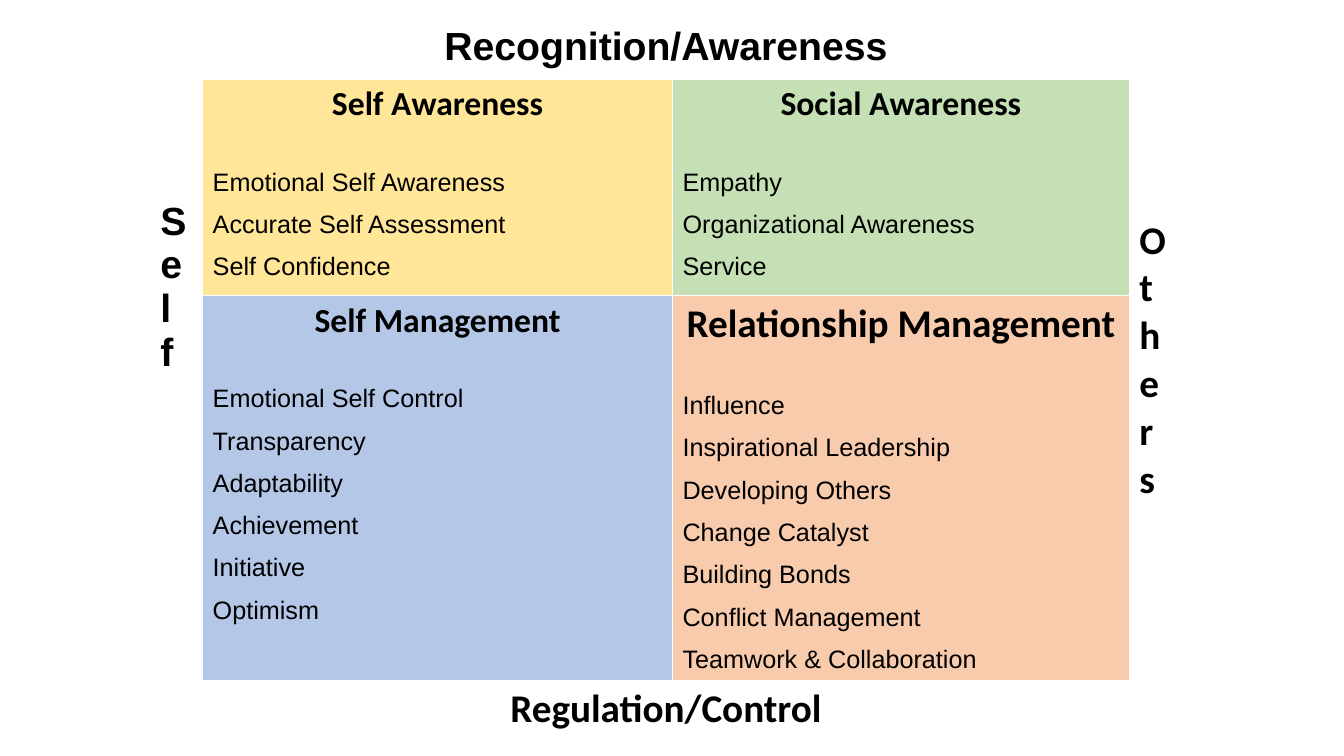
from dataclasses import dataclass

from lxml.etree import SubElement
from pptx import Presentation
from pptx.dml.color import RGBColor
from pptx.enum.text import PP_ALIGN
from pptx.oxml.ns import qn
from pptx.util import Inches, Pt


@dataclass(frozen=True)
class Theme:
    ink: str = "000000"
    border: str = "FFFFFF"
    self_awareness: str = "FFE699"
    social_awareness: str = "C5E0B4"
    self_management: str = "B4C7E7"
    relationship_management: str = "F8CBAD"
    heading_font: str = "Calibri"
    body_font: str = "Arial"
    axis_size: int = 28
    heading_size: int = 24
    item_size: int = 18
    heading_gap: int = 21
    thin: int = 1
    thick: int = 3


THEME = Theme()

# Row, column, heading, heading size, fill, competencies
QUADRANTS = [
    (1, 1, "Self Awareness", THEME.heading_size, THEME.self_awareness,
     ["Emotional Self Awareness", "Accurate Self Assessment", "Self Confidence"]),
    (1, 2, "Social Awareness", THEME.heading_size, THEME.social_awareness,
     ["Empathy", "Organizational Awareness", "Service"]),
    (2, 1, "Self Management", THEME.heading_size, THEME.self_management,
     ["Emotional Self Control", "Transparency", "Adaptability",
      "Achievement", "Initiative", "Optimism"]),
    (2, 2, "Relationship Management", THEME.axis_size, THEME.relationship_management,
     ["Influence", "Inspirational Leadership", "Developing Others",
      "Change Catalyst", "Building Bonds", "Conflict Management",
      "Teamwork & Collaboration"]),
]


class MatrixSlide:
    def __init__(self, slide, theme):
        self.slide = slide
        self.theme = theme

    def add_matrix(self, left, top, widths, heights):
        frame = self.slide.shapes.add_table(
            len(heights), len(widths), Inches(left), Inches(top),
            Inches(sum(widths)), Inches(sum(heights)))
        self.matrix = frame.table
        for flag in ("first_row", "horz_banding"):
            setattr(self.matrix, flag, False)
        for column, width in zip(self.matrix.columns, widths):
            column.width = Inches(width)
        for index, (row, height) in enumerate(zip(self.matrix.rows, heights)):
            row.height = Inches(height)
            for cell in row.cells:
                self.add_borders(cell, self.theme.thick if index == 0 else self.theme.thin)
                cell.fill.background()

    def add_borders(self, cell, bottom_width):
        properties = cell._tc.get_or_add_tcPr()
        for side in ("lnL", "lnR", "lnT", "lnB"):
            width = bottom_width if side == "lnB" else self.theme.thin
            line = SubElement(properties, qn(f"a:{side}"), w=str(Pt(width)))
            fill = SubElement(line, qn("a:solidFill"))
            SubElement(fill, qn("a:srgbClr"), val=self.theme.border)

    def add_lines(self, cell, lines, font, paragraph_format):
        frame = cell.text_frame
        for text in lines:
            paragraph = frame.paragraphs[0]
            if paragraph.runs:
                paragraph = frame.add_paragraph()
            for key, value in paragraph_format.items():
                setattr(paragraph, key, value)
            run = paragraph.add_run()
            run.text = text
            for key, value in font.items():
                setattr(run.font, key, value)
            run.font.color.rgb = RGBColor.from_string(self.theme.ink)

    def add_axis(self, first, last, lines, font_name, **paragraph_format):
        cell = self.matrix.cell(*first)
        cell.merge(self.matrix.cell(*last))
        font = {"name": font_name, "size": Pt(self.theme.axis_size), "bold": True}
        self.add_lines(cell, lines, font, paragraph_format)
        return cell

    def add_quadrant(self, row, column, heading, heading_size, fill, competencies):
        cell = self.matrix.cell(row, column)
        cell.fill.solid()
        cell.fill.fore_color.rgb = RGBColor.from_string(fill)
        self.add_lines(
            cell, [heading],
            {"name": self.theme.heading_font, "size": Pt(heading_size), "bold": True},
            {"alignment": PP_ALIGN.CENTER, "space_after": Pt(self.theme.heading_gap)})
        self.add_lines(
            cell, competencies,
            {"name": self.theme.body_font, "size": Pt(self.theme.item_size), "bold": False},
            {"line_spacing": 1.5})


def main():
    presentation = Presentation()
    presentation.slide_width = Inches(13.33)
    presentation.slide_height = Inches(7.5)
    page = MatrixSlide(
        presentation.slides.add_slide(presentation.slide_layouts[6]), THEME)
    page.add_matrix(1.49, 0.2, [0.52, 4.66, 4.53, 0.65], [0.58, 2.15, 3.82, 0.58])

    # Axis labels above and below
    page.add_axis((0, 1), (0, 2), ["Recognition/Awareness"], THEME.body_font,
                  alignment=PP_ALIGN.CENTER)
    page.add_axis((3, 1), (3, 2), ["Regulation/Control"], THEME.heading_font,
                  alignment=PP_ALIGN.CENTER)

    # Axis labels at the sides, one letter a line
    self_axis = page.add_axis((0, 0), (3, 0), "Self", THEME.body_font)
    self_axis.margin_top = Inches(1.78)
    others_axis = page.add_axis((0, 3), (3, 3), "Others", THEME.heading_font)
    others_axis.margin_top = Inches(1.95)

    # Competency quadrants
    for quadrant in QUADRANTS:
        page.add_quadrant(*quadrant)

    presentation.save("out.pptx")


if __name__ == "__main__":
    main()
